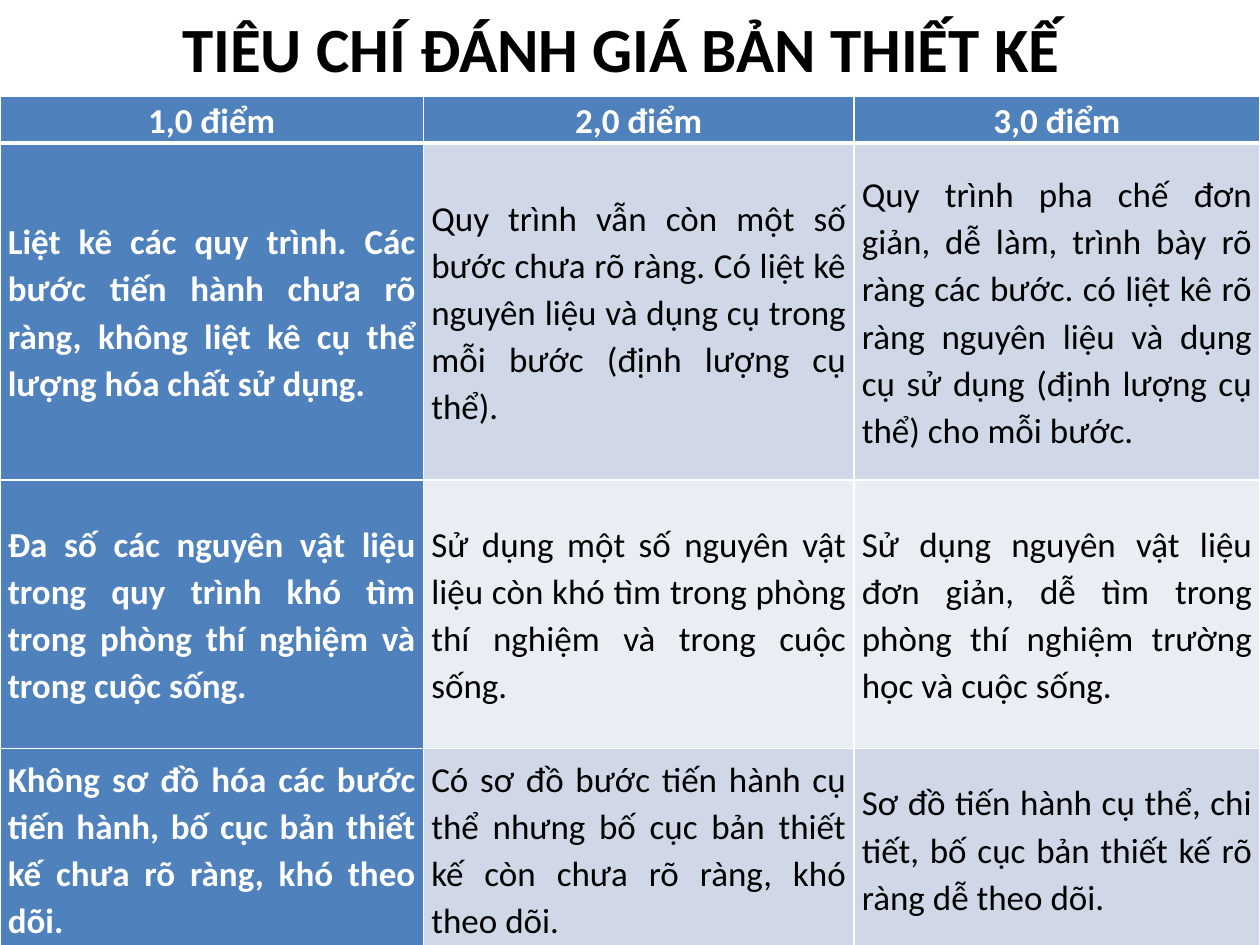
from dataclasses import dataclass

from lxml import etree
from pptx import Presentation
from pptx.dml.color import RGBColor
from pptx.enum.text import MSO_ANCHOR, PP_ALIGN
from pptx.oxml.ns import qn
from pptx.util import Pt

CENTER, JUSTIFY = PP_ALIGN.CENTER, PP_ALIGN.JUSTIFY
MIDDLE = MSO_ANCHOR.MIDDLE
TITLE_ONLY = 5


@dataclass(frozen=True)
class Theme:
    font: str = "Calibri"
    title_size: float = 36
    cell_size: float = 20
    ink: str = "000000"
    paper: str = "FFFFFF"
    accent: str = "4F81BD"
    bands: tuple = ("D0D8E8", "E9EDF4")
    rule: float = 1
    header_rule: float = 3


TITLE = "TIÊU CHÍ ĐÁNH GIÁ BẢN THIẾT KẾ"
CRITERIA = [
    ("1,0 điểm", "2,0 điểm", "3,0 điểm"),
    (
        "Liệt kê các quy trình. Các bước tiến hành chưa rõ ràng, không liệt kê cụ thể lượng hóa chất sử dụng.",
        "Quy trình vẫn còn một số bước chưa rõ ràng. Có liệt kê nguyên liệu và dụng cụ trong mỗi bước (định lượng cụ thể).",
        "Quy trình pha chế đơn giản, dễ làm, trình bày rõ ràng các bước. có liệt kê rõ ràng nguyên liệu và dụng cụ sử dụng (định lượng cụ thể) cho mỗi bước.",
    ),
    (
        "Đa số các nguyên vật liệu trong quy trình khó tìm trong phòng thí nghiệm và trong cuộc sống.",
        "Sử dụng một số nguyên vật liệu còn khó tìm trong phòng thí nghiệm và trong cuộc sống.",
        "Sử dụng nguyên vật liệu đơn giản, dễ tìm trong phòng thí nghiệm trường học và cuộc sống.",
    ),
    (
        "Không sơ đồ hóa các bước tiến hành, bố cục bản thiết kế chưa rõ ràng, khó theo dõi.",
        "Có sơ đồ bước tiến hành cụ thể nhưng bố cục bản thiết kế còn chưa rõ ràng, khó theo dõi.",
        "Sơ đồ tiến hành cụ thể, chi tiết, bố cục bản thiết kế rõ ràng dễ theo dõi.",
    ),
]
COLUMN_WIDTHS = (242, 246, 232)
ROW_HEIGHTS = (26.5, 192.5, 153.5, 115)


def write_text(frame, text, *, font, size, color, bold=False, align=CENTER,
               line_spacing=None, space_before=None):
    paragraph = frame.paragraphs[0]
    paragraph.alignment = align
    paragraph.line_spacing = line_spacing
    paragraph.space_before = space_before
    run = paragraph.add_run()
    run.text = text
    run.font.name = font
    run.font.size = Pt(size)
    run.font.bold = bold
    run.font.color.rgb = RGBColor.from_string(color)


def set_borders(cell, color, widths):
    properties = cell._tc.get_or_add_tcPr()
    for position, (side, width) in enumerate(widths.items()):
        line = etree.Element(qn(f"a:ln{side}"), w=str(Pt(width)))
        fill = etree.SubElement(line, qn("a:solidFill"))
        etree.SubElement(fill, qn("a:srgbClr"), val=color)
        properties.insert(position, line)


class SlideBuilder:
    def __init__(self, slide, theme):
        self.slide = slide
        self.theme = theme

    def title(self, text, left, top, width, height):
        heading = self.slide.shapes.title
        heading.left, heading.top = Pt(left), Pt(top)
        heading.width, heading.height = Pt(width), Pt(height)
        heading.text_frame.vertical_anchor = MIDDLE
        write_text(heading.text_frame, text, font=self.theme.font,
                   size=self.theme.title_size, color=self.theme.ink, bold=True)

    def table(self, rows, left, top, widths, heights):
        grid = self.slide.shapes.add_table(
            len(rows), len(widths), Pt(left), Pt(top),
            Pt(sum(widths)), Pt(sum(heights))).table
        grid.first_col = True
        for column, width in zip(grid.columns, widths):
            column.width = Pt(width)
        for row, height in zip(grid.rows, heights):
            row.height = Pt(height)
        for r, texts in enumerate(rows):
            for c, text in enumerate(texts):
                self.cell(grid.cell(r, c), text, r, c)

    def cell(self, cell, text, row, column):
        theme = self.theme
        is_header = row == 0
        is_strong = is_header or column == 0
        cell.vertical_anchor = MIDDLE
        cell.margin_left = cell.margin_right = Pt(4.5)
        cell.margin_top = cell.margin_bottom = Pt(0)
        cell.fill.solid()
        cell.fill.fore_color.rgb = RGBColor.from_string(
            theme.accent if is_strong else theme.bands[(row - 1) % 2])
        set_borders(cell, theme.paper, {
            "L": theme.rule,
            "R": theme.rule,
            "T": theme.header_rule if row == 1 else theme.rule,
            "B": theme.header_rule if is_header else theme.rule,
        })
        write_text(cell.text_frame, text, font=theme.font, size=theme.cell_size,
                   color=theme.paper if is_strong else theme.ink, bold=is_strong,
                   align=CENTER if is_header else JUSTIFY,
                   line_spacing=1.1, space_before=Pt(3))


def main():
    deck = Presentation()
    deck.slide_width, deck.slide_height = Pt(720), Pt(540)
    slide = deck.slides.add_slide(deck.slide_layouts[TITLE_ONLY])
    builder = SlideBuilder(slide, Theme())
    builder.title(TITLE, 31, 0, 648, 54)
    builder.table(CRITERIA, 0, 54.75, COLUMN_WIDTHS, ROW_HEIGHTS)
    deck.save("out.pptx")


if __name__ == "__main__":
    main()
